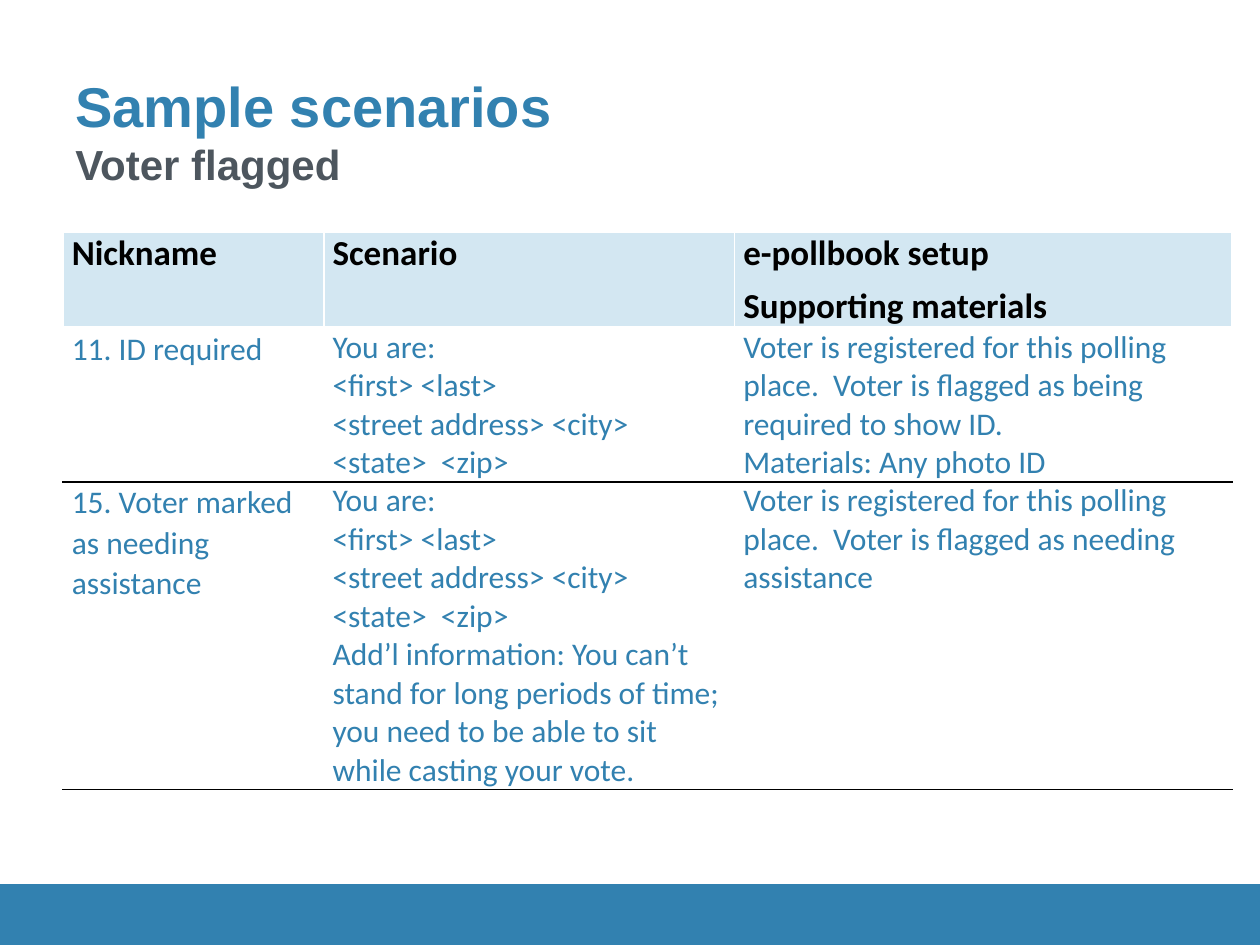
from dataclasses import dataclass

from lxml import etree
from pptx import Presentation
from pptx.dml.color import RGBColor
from pptx.enum.shapes import MSO_SHAPE
from pptx.enum.text import MSO_ANCHOR
from pptx.oxml.ns import qn
from pptx.util import Inches, Pt

RECT = MSO_SHAPE.RECTANGLE
BOTTOM = MSO_ANCHOR.BOTTOM
BLUE = RGBColor(0x32, 0x81, 0xB0)
PALE = RGBColor(0xD3, 0xE7, 0xF2)
GREY = RGBColor(0x4D, 0x56, 0x5E)
BLACK = RGBColor(0, 0, 0)
WHITE = RGBColor(0xFF, 0xFF, 0xFF)

HEAD = {"name": "Calibri", "size": Pt(20), "bold": True}
BODY = {"name": "Calibri", "size": Pt(18), "bold": False}
TITLE = {"name": "Arial", "size": Pt(32), "bold": True}
SUB = {"name": "Arial", "size": Pt(24), "bold": True}
SPACED = {"space_before": Pt(3), "space_after": Pt(3)}
LABEL = {**SPACED, "line_spacing": 1.05}
TIGHT = {"space_before": Pt(0), "space_after": Pt(0)}
CELL = {"margin_left": Inches(0.07), "margin_right": Inches(0.07),
        "margin_top": 0, "margin_bottom": 0}
FRAME = {"word_wrap": True, "vertical_anchor": BOTTOM}
WIDTHS = (2.07, 3.26, 3.95)


@dataclass
class Row:
    height: float
    cells: tuple[tuple[str, ...], ...]
    font: dict
    color: RGBColor
    fill: RGBColor
    paras: tuple[dict, ...]
    top: tuple[RGBColor, int]
    base: tuple[RGBColor, int]


VOTER = ("You are:", "<first> <last>", "<street address> <city> <state>  <zip>")
PLACE = "Voter is registered for this polling place.  Voter is flagged as "
THIN = (WHITE, 1)
RULE = (BLACK, 1)
MIXED = (LABEL, TIGHT, TIGHT)
ROWS = (
    Row(0.56, (("Nickname",), ("Scenario",),
               ("e-pollbook setup", "Supporting materials")),
        HEAD, BLACK, PALE, (SPACED,) * 3, THIN, (WHITE, 3)),
    Row(0.76, (("11. ID required",), VOTER,
               (PLACE + "being required to show ID.", "Materials: Any photo ID")),
        BODY, BLUE, WHITE, MIXED, THIN, RULE),
    Row(0.71, (("15. Voter marked as needing assistance",),
               VOTER + ("Add’l information: You can’t stand for long periods of time; "
                        "you need to be able to sit while casting your vote.",),
               (PLACE + "needing assistance",)),
        BODY, BLUE, WHITE, MIXED, RULE, RULE),
)


def apply(item, values: dict) -> None:
    for key, value in values.items():
        setattr(item, key, value)


def paint(fill, color: RGBColor) -> None:
    fill.solid()
    fill.fore_color.rgb = color


def write(para, text: str, font: dict, color: RGBColor) -> None:
    run = para.add_run()
    run.text = text
    apply(run.font, font)
    run.font.color.rgb = color


def edge(cell, sides: dict) -> None:
    props = cell._tc.get_or_add_tcPr()
    for spot, (side, (color, width)) in enumerate(sides.items()):
        line = etree.Element(qn(f"a:{side}"), w=str(Pt(width)))
        fill = etree.SubElement(line, qn("a:solidFill"))
        etree.SubElement(fill, qn("a:srgbClr"), val=str(color))
        props.insert(spot, line)


def fill_cell(cell, lines: tuple[str, ...], form: dict, row: Row) -> None:
    apply(cell, CELL)
    paint(cell.fill, row.fill)
    edge(cell, {"lnL": THIN, "lnR": THIN, "lnT": row.top, "lnB": row.base})
    frame = cell.text_frame
    for spot, text in enumerate(lines):
        para = frame.add_paragraph() if spot else frame.paragraphs[0]
        apply(para, form)
        write(para, text, row.font, row.color)


def add_grid(slide) -> None:
    high = sum(row.height for row in ROWS)
    grid = slide.shapes.add_table(
        len(ROWS), len(WIDTHS), Inches(0.5), Inches(1.84),
        Inches(sum(WIDTHS)), Inches(high)).table
    for col, width in zip(grid.columns, WIDTHS):
        col.width = Inches(width)
    for line, row in zip(grid.rows, ROWS):
        line.height = Inches(row.height)
        for cell, lines, form in zip(line.cells, row.cells, row.paras):
            fill_cell(cell, lines, form, row)


def add_bar(slide) -> None:
    bar = slide.shapes.add_shape(RECT, 0, Inches(7.02), Inches(10), Inches(0.5))
    bar.shadow.inherit = False
    paint(bar.fill, BLUE)
    paint(bar.line.fill, BLUE)
    bar.line.width = Pt(0.75)


def add_title(slide) -> None:
    box = slide.shapes.add_textbox(Inches(0.5), Inches(0.3), Inches(9), Inches(1.25))
    apply(box.text_frame, FRAME)
    para = box.text_frame.paragraphs[0]
    write(para, "Sample scenarios", TITLE, BLUE)
    para.add_line_break()
    write(para, "Voter flagged", SUB, GREY)


def main() -> None:
    deck = Presentation()
    apply(deck, {"slide_width": Inches(10), "slide_height": Inches(7.5)})
    slide = deck.slides.add_slide(deck.slide_layouts[6])
    add_bar(slide)
    add_grid(slide)
    add_title(slide)
    deck.save("out.pptx")


if __name__ == "__main__":
    main()
